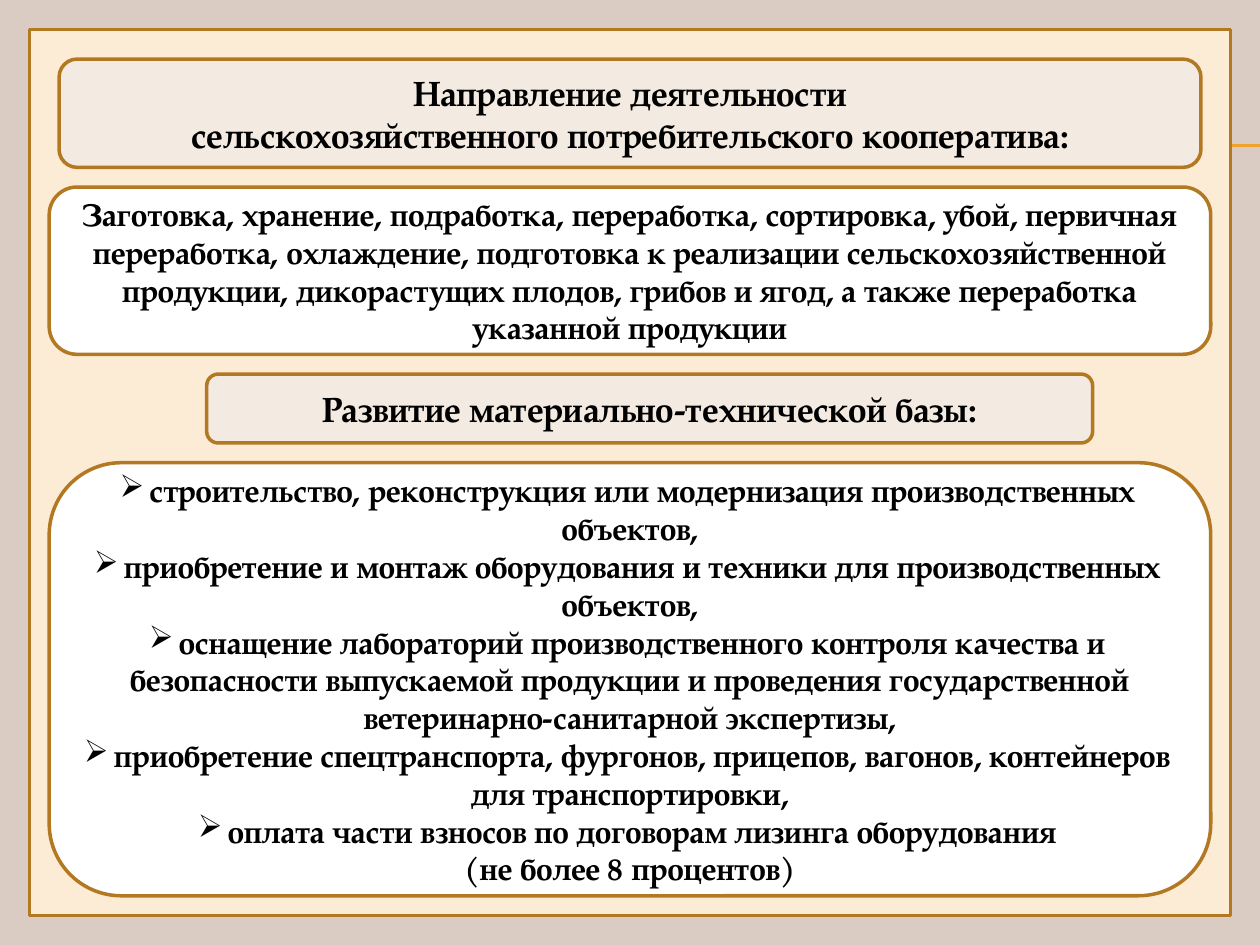
"""Build a slide on the activities and material base of a farm cooperative."""
from dataclasses import dataclass

from lxml import etree
from pptx import Presentation
from pptx.dml.color import RGBColor
from pptx.enum.shapes import MSO_CONNECTOR, MSO_SHAPE
from pptx.enum.text import MSO_ANCHOR, PP_ALIGN
from pptx.oxml.ns import qn
from pptx.util import Inches, Pt

STRAIGHT = MSO_CONNECTOR.STRAIGHT
RECTANGLE, ROUNDED = MSO_SHAPE.RECTANGLE, MSO_SHAPE.ROUNDED_RECTANGLE
MIDDLE, CENTER = MSO_ANCHOR.MIDDLE, PP_ALIGN.CENTER

WIDTH, HEIGHT = 10, 7.5
CELL = WIDTH / 128
FONT = "TeX Gyre Pagella"
BACKDROP, CREAM, HEADING_FILL, WHITE = "DACBC3", "FCECD5", "F3EAE2", "FFFFFF"
BORDER, RULE_COLOR, BLACK = "B27822", "F0A22E", "000000"


@dataclass(frozen=True)
class Panel:
    """A bordered panel placed in grid cells."""

    column: int
    row: int
    columns: int
    rows: int
    fill: str
    paragraphs: tuple[str, ...] = ()
    size: int = 18
    bullet: str = ""
    outline: MSO_SHAPE = ROUNDED


PANELS = (
    Panel(3, 3, 122, 90, CREAM, outline=RECTANGLE),
    Panel(6, 6, 116, 11, HEADING_FILL, (
        "Направление деятельности",
        "сельскохозяйственного потребительского кооператива:",
    ), 20),
    Panel(5, 19, 118, 17, WHITE, (
        "Заготовка, хранение, подработка, переработка, сортировка, убой, "
        "первичная переработка, охлаждение, подготовка к реализации "
        "сельскохозяйственной продукции, дикорастущих плодов, грибов и ягод, "
        "а также переработка указанной продукции",
    )),
    Panel(21, 38, 90, 7, HEADING_FILL, (
        "Развитие материально-технической базы:",
    ), 20),
    Panel(5, 47, 118, 44, WHITE, (
        "строительство, реконструкция или модернизация производственных объектов,",
        "приобретение и монтаж оборудования и техники для производственных объектов,",
        "оснащение лабораторий производственного контроля качества и безопасности "
        "выпускаемой продукции и проведения государственной "
        "ветеринарно-санитарной экспертизы,",
        "приобретение спецтранспорта, фургонов, прицепов, вагонов, контейнеров "
        "для транспортировки,",
        "оплата части взносов по договорам лизинга оборудования\n"
        "(не более 8 процентов)",
    ), bullet="➢"),
)


def color(value: str) -> RGBColor:
    """Turn a hex string into a colour."""
    return RGBColor.from_string(value)


def cells(count: float) -> int:
    """Turn a number of grid cells into a length."""
    return Inches(count * CELL)


def apply(target, values: dict) -> None:
    """Set every attribute named in values on target."""
    for name, value in values.items():
        setattr(target, name, value)


def add_rule(slide, top: float) -> None:
    """Draw a thin rule that runs to the right edge of the slide."""
    rule = slide.shapes.add_connector(
        STRAIGHT, Inches(0.56), Inches(top), Inches(WIDTH), Inches(top))
    rule.line.color.rgb = color(RULE_COLOR)
    rule.line.width = Pt(0.75)
    etree.SubElement(rule._element.spPr, qn("a:effectLst"))


def write_paragraph(paragraph, text: str, panel: Panel) -> None:
    """Write one centred paragraph with the panel's bullet and text size."""
    paragraph.alignment = CENTER
    if panel.bullet:
        properties = paragraph._p.get_or_add_pPr()
        etree.SubElement(properties, qn("a:buChar"), char=panel.bullet)
    for index, line in enumerate(text.split("\n")):
        if index:
            paragraph.add_line_break()
        run = paragraph.add_run()
        run.text = line
        apply(run.font, {"name": FONT, "size": Pt(panel.size), "bold": True})
        run.font.color.rgb = color(BLACK)


def add_panel(slide, panel: Panel) -> None:
    """Draw one panel and its text."""
    shape = slide.shapes.add_shape(
        panel.outline, cells(panel.column), cells(panel.row),
        cells(panel.columns), cells(panel.rows))
    shape.shadow.inherit = False
    shape.fill.solid()
    shape.fill.fore_color.rgb = color(panel.fill)
    shape.line.color.rgb = color(BORDER)
    shape.line.width = Pt(2)
    frame = shape.text_frame
    apply(frame, {"word_wrap": True, "vertical_anchor": MIDDLE})
    for index, text in enumerate(panel.paragraphs):
        paragraph = frame.add_paragraph() if index else frame.paragraphs[0]
        write_paragraph(paragraph, text, panel)


def main() -> None:
    """Build and save the slide."""
    deck = Presentation()
    apply(deck, {"slide_width": Inches(WIDTH), "slide_height": Inches(HEIGHT)})
    slide = deck.slides.add_slide(deck.slide_layouts[6])
    slide.background.fill.solid()
    slide.background.fill.fore_color.rgb = color(BACKDROP)
    for top in (1.15, 1.16):
        add_rule(slide, top)
    for panel in PANELS:
        add_panel(slide, panel)
    deck.save("out.pptx")


if __name__ == "__main__":
    main()
